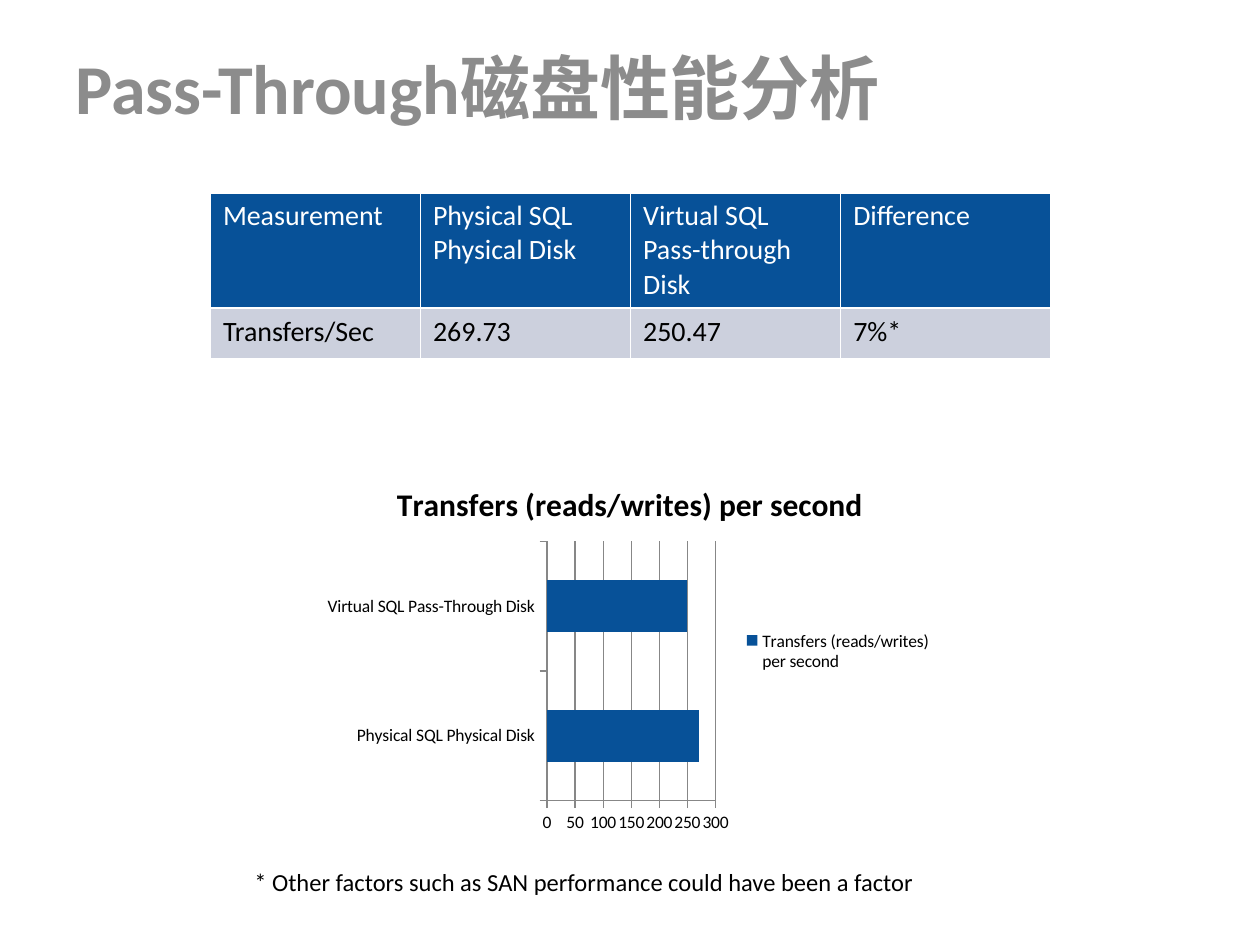
from dataclasses import dataclass

from pptx import Presentation
from pptx import util as u
from pptx.chart import data as chart_data
from pptx.dml.color import RGBColor
from pptx.enum import chart as charts
from pptx.enum import text


@dataclass(frozen=True)
class Theme:
    font: str = "Calibri"
    blue: str = "075198"
    band: str = "CCD0DD"
    heading: str = "8C8C8C"
    axis: str = "878787"
    black: str = "000000"
    white: str = "FFFFFF"
    title_size: int = 40
    chart_title_size: int = 18
    table_size: int = 16
    note_size: int = 14
    chart_size: int = 10


THEME = Theme()
METRIC = "Transfers (reads/writes) per second"


def style_font(font, size, color, bold=False):
    font.name = THEME.font
    font.size = u.Pt(size)
    font.bold = bold
    font.color.rgb = RGBColor.from_string(color)


def add_run(para, words, size, color, bold=False):
    span = para.add_run()
    span.text = words
    style_font(span.font, size, color, bold)


def paint(fill, color):
    fill.solid()
    fill.fore_color.rgb = RGBColor.from_string(color)


def place_title(page, left, top, width, height):
    title = page.shapes.title
    title.left, title.top, title.width, title.height = left, top, width, height
    frame = title.text_frame
    frame.vertical_anchor = text.MSO_ANCHOR.TOP
    para = frame.paragraphs[0]
    para.alignment = text.PP_ALIGN.LEFT
    add_run(para, "Pass-Through磁盘性能分析", THEME.title_size, THEME.heading, True)


def place_table(page, left, top, width, heights):
    rows = [
        ("Measurement", "Physical SQL Physical Disk",
         "Virtual SQL Pass-through Disk", "Difference"),
        ("Transfers/Sec", "269.73", "250.47", "7%*"),
    ]
    looks = [(THEME.blue, THEME.white), (THEME.band, THEME.black)]
    table = page.shapes.add_table(
        len(rows), len(rows[0]), left, top, width, sum(heights)).table
    for row, height, words, (fill, ink) in zip(table.rows, heights, rows, looks):
        row.height = height
        for cell, word in zip(row.cells, words):
            paint(cell.fill, fill)
            add_run(cell.text_frame.paragraphs[0], word, THEME.table_size, ink)


def place_chart(page, left, top, width, height):
    data = chart_data.CategoryChartData()
    data.categories = ["Physical SQL Physical Disk", "Virtual SQL Pass-Through Disk"]
    data.add_series(METRIC, (270, 250))
    chart = page.shapes.add_chart(
        charts.XL_CHART_TYPE.BAR_CLUSTERED, left, top, width, height, data).chart
    style_font(chart.font, THEME.chart_size, THEME.black)

    chart.has_title = True
    add_run(chart.chart_title.text_frame.paragraphs[0], METRIC,
            THEME.chart_title_size, THEME.black, True)
    chart.has_legend = True
    chart.legend.position = charts.XL_LEGEND_POSITION.RIGHT
    chart.legend.include_in_layout = False

    plot = chart.plots[0]
    plot.gap_width = 150
    plot.vary_by_categories = False
    paint(plot.series[0].format.fill, THEME.blue)

    values = chart.value_axis
    values.minimum_scale, values.maximum_scale, values.major_unit = 0, 300, 50
    values.has_major_gridlines = True
    for axis in (chart.category_axis, values):
        axis.major_tick_mark = charts.XL_TICK_MARK.CROSS if axis is values else charts.XL_TICK_MARK.OUTSIDE
        axis.major_tick_mark = charts.XL_TICK_MARK.OUTSIDE
    for part in (chart.category_axis, values, values.major_gridlines):
        part.format.line.width = u.Pt(0.75)
        part.format.line.color.rgb = RGBColor.from_string(THEME.axis)


def place_note(page, left, top, width, height):
    box = page.shapes.add_textbox(left, top, width, height)
    box.text_frame.word_wrap = True
    add_run(box.text_frame.paragraphs[0],
            "* Other factors such as SAN performance could have been a factor",
            THEME.note_size, THEME.black)


def main():
    deck = Presentation()
    deck.slide_width, deck.slide_height = u.Inches(10), u.Inches(7.5)
    page = deck.slides.add_slide(deck.slide_layouts[5])
    place_title(page, u.Inches(0.5), u.Inches(0.3), u.Inches(9), u.Inches(1.25))
    place_chart(page, u.Inches(2.5), u.Inches(3.67), u.Inches(5), u.Inches(3))
    place_table(page, u.Inches(1.67), u.Inches(1.53), u.Inches(6.67),
                [u.Inches(0.91), u.Inches(0.4)])
    place_note(page, u.Inches(1.92), u.Inches(6.83), u.Inches(6), u.Inches(0.34))
    deck.save("out.pptx")


if __name__ == "__main__":
    main()
